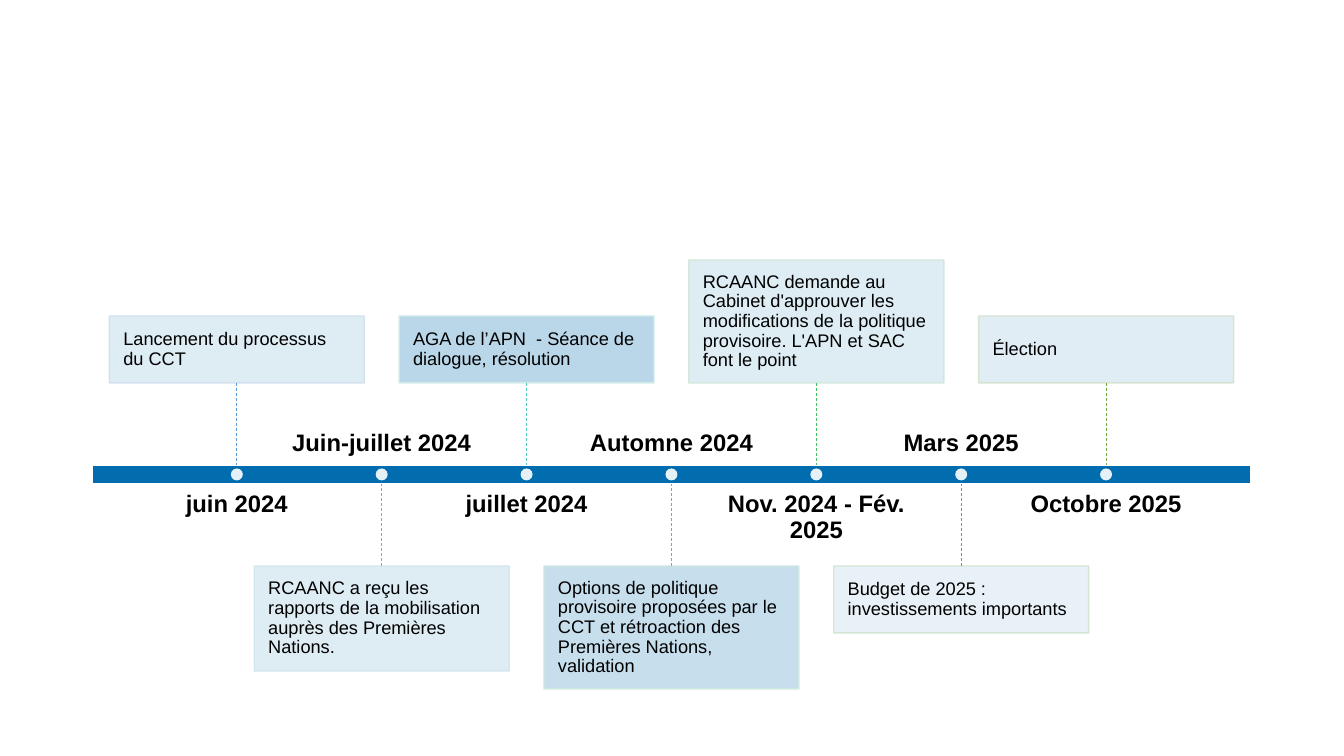
from dataclasses import dataclass

from lxml.etree import SubElement
from pptx import Presentation
from pptx.dml.color import RGBColor
from pptx.enum.dml import MSO_LINE
from pptx.enum.shapes import MSO_CONNECTOR, MSO_SHAPE
from pptx.enum.text import MSO_ANCHOR, PP_ALIGN
from pptx.oxml.ns import qn
from pptx.util import Emu, Pt


@dataclass(frozen=True)
class Theme:
    font: str = "Arial"
    text: str = "000000"
    white: str = "FFFFFF"
    blue: str = "016DAF"
    label_size: int = 17
    body_size: int = 13


THEME = Theme()
TOP, LEFT, BOTTOM, RIGHT = range(4)

MILESTONES = [
    ("juin 2024", "Lancement du processus du CCT",
     67, 13, "D2DEEF", "5B9BD5"),
    ("Juin-juillet 2024",
     "RCAANC a reçu les rapports de la mobilisation auprès des Premières Nations.",
     105, 13, "D1E6EE", "56BCD0"),
    ("juillet 2024", "AGA de l’APN  - Séance de dialogue, résolution",
     67, 27, "D0ECEA", "52CAB8"),
    ("Automne 2024",
     "Options de politique provisoire proposées par le CCT et rétroaction "
     "des Premières Nations, validation",
     123, 22, "D0EAE1", "4DC58D"),
    ("Nov. 2024 - Fév. 2025",
     "RCAANC demande au Cabinet d'approuver les modifications de la politique "
     "provisoire. L'APN et SAC font le point",
     123, 13, "D0E7D8", "49BF64"),
    ("Mars 2025", "Budget de 2025 : investissements importants",
     67, 9, "CFE5D0", "50B846"),
    ("Octobre 2025", "Élection",
     67, 12, "D5E3CF", "70AD47"),
]


def px(n):
    return Emu(round(n * 914400 / 100.8))


def paint(fmt, color, alpha=100):
    fmt.solid()
    fmt.fore_color.rgb = RGBColor.from_string(color)
    if alpha < 100:
        clr = next(fmt._xPr.iter(qn("a:srgbClr")))
        SubElement(clr, qn("a:alpha"), val=str(alpha * 1000))


def add_block(s, kind, x, y, w, h, fill, alpha=100, line=None, line_alpha=100):
    sp = s.shapes.add_shape(kind, px(x), px(y), px(w), px(h))
    sp.shadow.inherit = False
    paint(sp.fill, fill, alpha)
    if line:
        sp.line.width = Pt(1)
        paint(sp.line.fill, line, line_alpha)
    else:
        sp.line.fill.background()
    return sp


def write(tf, text, size, bold, align, anchor, inset):
    tf.word_wrap = True
    tf.vertical_anchor = anchor
    tf.margin_left = tf.margin_right = tf.margin_top = tf.margin_bottom = px(inset)
    p = tf.paragraphs[0]
    p.text = text
    p.alignment = align
    p.line_spacing = 0.9
    p.font.name = THEME.font
    p.font.size = Pt(size)
    p.font.bold = bold
    p.font.color.rgb = RGBColor.from_string(THEME.text)


def add_label(s, text, x, y, w, h, anchor):
    tb = s.shapes.add_textbox(px(x), px(y), px(w), px(h))
    write(tb.text_frame, text, THEME.label_size, True, PP_ALIGN.CENTER, anchor, 0)


def add_stem(s, card, side, x, y, color):
    c = s.shapes.add_connector(MSO_CONNECTOR.STRAIGHT, px(x), px(y), px(x), px(y))
    c.begin_connect(card, side)
    paint(c.line.fill, color)
    c.line.width = Pt(0.5)
    c.line.dash_style = MSO_LINE.DASH
    SubElement(c._element.spPr, qn("a:effectLst"))
    return c


def add_milestone(s, bar, milestone, x, y, bar_h, above):
    date, text, card_h, alpha, border, stem_color = milestone
    card_w, stem, label_w, label_h, gap, dot = 255, 82, 232, 54, 8, 12
    bottom = y + bar_h
    if above:
        card_y, label_y = y - stem - card_h, bottom + gap
        side, anchor, stem_y = BOTTOM, MSO_ANCHOR.TOP, y
    else:
        card_y, label_y = bottom + stem, y - gap - label_h
        side, anchor, stem_y = TOP, MSO_ANCHOR.BOTTOM, bottom
    card = add_block(s, MSO_SHAPE.RECTANGLE, x - card_w / 2, card_y, card_w, card_h,
                     THEME.blue, alpha, border, 90)
    write(card.text_frame, text, THEME.body_size, False, PP_ALIGN.LEFT,
          MSO_ANCHOR.MIDDLE, 14)
    add_label(s, date, x - label_w / 2, label_y, label_w, label_h, anchor)
    c = add_stem(s, card, side, x, stem_y, stem_color)
    if date == "Automne 2024":
        c.end_connect(bar, BOTTOM)
    add_block(s, MSO_SHAPE.OVAL, x - dot / 2, y + (bar_h - dot) / 2, dot, dot,
              THEME.white, 90)


def add_timeline(s, x, y, w, h):
    bar = add_block(s, MSO_SHAPE.RECTANGLE, x, y, w, h, THEME.blue, line=THEME.white)
    step = w / (len(MILESTONES) + 1)
    for i, milestone in enumerate(MILESTONES):
        add_milestone(s, bar, milestone, x + (i + 1) * step, y, h, i % 2 == 0)


def main():
    prs = Presentation()
    prs.slide_width, prs.slide_height = px(1344), px(756)
    s = prs.slides.add_slide(prs.slide_layouts[6])
    add_timeline(s, 92, 465, 1159, 19)
    prs.save("out.pptx")


if __name__ == "__main__":
    main()
